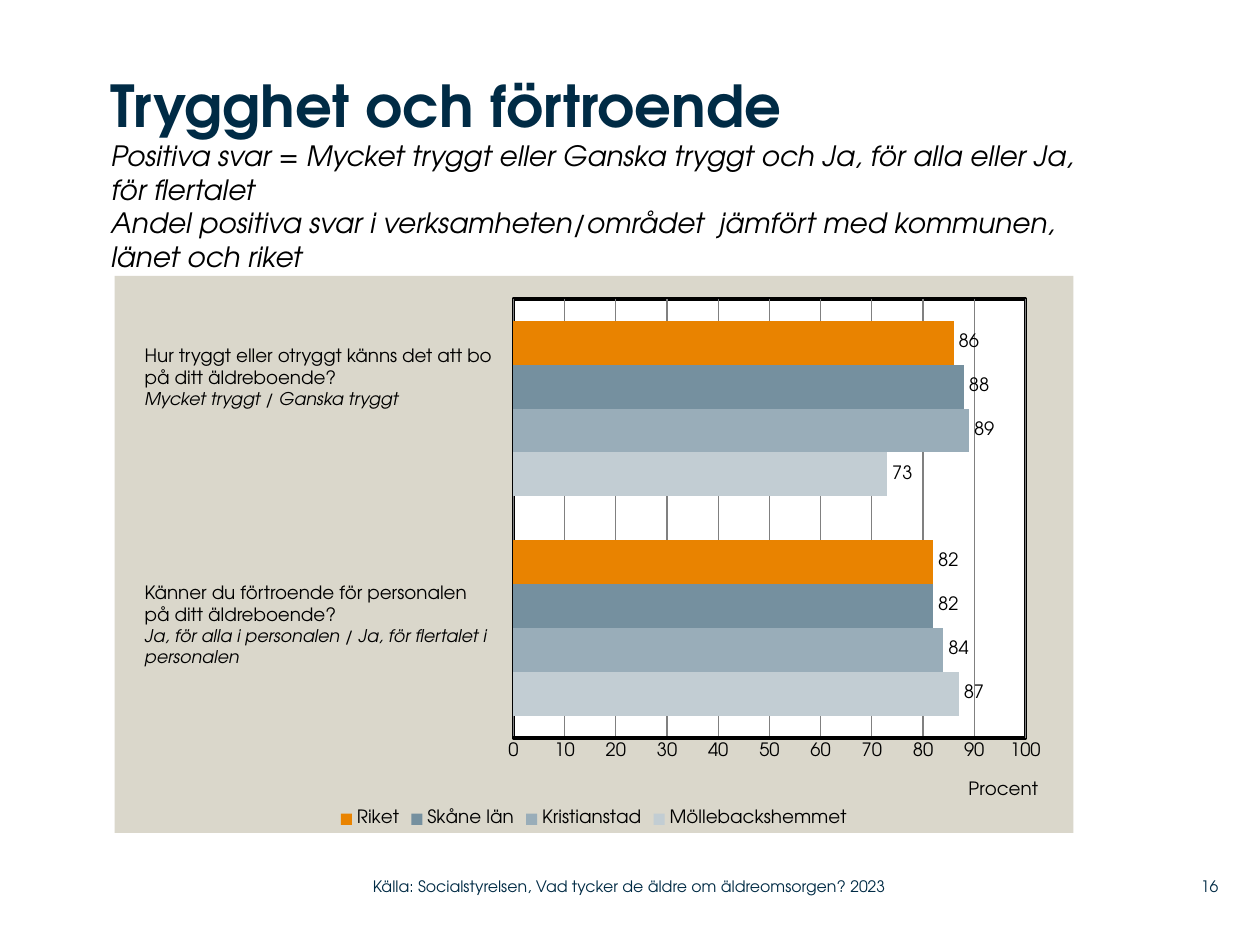
from dataclasses import dataclass
from lxml import etree
from pptx import Presentation, util as u
from pptx.chart.data import CategoryChartData
from pptx.dml.color import RGBColor
from pptx.enum import chart as ch, text as tx
from pptx.oxml.ns import qn


@dataclass(frozen=True)
class Theme:
    face: str = "TeX Gyre Adventor"
    navy: str = "002B45"
    black: str = "000000"
    white: str = "FFFFFF"
    sand: str = "DAD7CB"
    grid: str = "808080"
    head: float = 33
    lead: float = 16
    body: float = 10.5
    answer: float = 10
    foot: float = 9


T = Theme()
SERIES = [
    ("Möllebackshemmet", (87, 73), "C2CDD3"),
    ("Kristianstad", (84, 89), "99ADB9"),
    ("Skåne län", (82, 88), "75909F"),
    ("Riket", (82, 86), "E98300"),
]


def style(font, size, color, bold=False, italic=False):
    font.name, font.size = T.face, u.Pt(size)
    font.bold, font.italic = bold, italic
    font.color.rgb = RGBColor.from_string(color)


def paint(fill, color):
    fill.solid()
    fill.fore_color.rgb = RGBColor.from_string(color)


def inches(box):
    return [u.Inches(v) for v in box]


def bare(frame, anchor):
    frame.word_wrap = True
    frame.vertical_anchor = anchor
    frame.margin_left = frame.margin_right = 0
    frame.margin_top = frame.margin_bottom = 0


def heading(slide, box, title, leads):
    shape = slide.shapes.title
    shape.left, shape.top, shape.width, shape.height = inches(box)
    frame = shape.text_frame
    bare(frame, tx.MSO_ANCHOR.TOP)
    frame.auto_size = tx.MSO_AUTO_SIZE.NONE
    para = frame.paragraphs[0]
    para.alignment = tx.PP_ALIGN.LEFT
    para.line_spacing = 1.0
    run = para.add_run()
    run.text = title
    style(run.font, T.head, T.navy, bold=True)
    for lead in leads:
        para.add_line_break()
        run = para.add_run()
        run.text = lead
        style(run.font, T.lead, T.black, italic=True)


def question(slide, box, lines, answer):
    frame = slide.shapes.add_textbox(*inches(box)).text_frame
    frame.word_wrap = True
    for i, line in enumerate(lines + [answer]):
        para = frame.paragraphs[0] if i == 0 else frame.add_paragraph()
        para.text = line
        last = i == len(lines)
        style(para.font, T.answer if last else T.body, T.black, italic=last)


def footer(slide, box, words, align):
    frame = slide.shapes.add_textbox(*inches(box)).text_frame
    bare(frame, tx.MSO_ANCHOR.MIDDLE)
    para = frame.paragraphs[0]
    para.text, para.alignment = words, align
    style(para.font, T.foot, T.navy)


def area(parent, color, before=None, edge=None):
    """Fill a chart region, with an optional outline colour."""
    props = etree.Element(qn("c:spPr"))
    fill = etree.SubElement(props, qn("a:solidFill"))
    etree.SubElement(fill, qn("a:srgbClr"), val=color)
    line = etree.SubElement(props, qn("a:ln"), w=str(u.Pt(2)))
    if edge:
        fill = etree.SubElement(line, qn("a:solidFill"))
        etree.SubElement(fill, qn("a:srgbClr"), val=edge)
    else:
        etree.SubElement(line, qn("a:noFill"))
    if before is None:
        parent.append(props)
    else:
        before.addprevious(props)


def place(plot, x, y, w, h):
    """Fix the inner plot area as shares of the chart."""
    for old in plot.findall(qn("c:layout")):
        plot.remove(old)
    layout = etree.Element(qn("c:layout"))
    plot.insert(0, layout)
    manual = etree.SubElement(layout, qn("c:manualLayout"))
    parts = [("layoutTarget", "inner"), ("xMode", "edge"), ("yMode", "edge"),
             ("x", x), ("y", y), ("w", w), ("h", h)]
    for name, val in parts:
        etree.SubElement(manual, qn("c:" + name), val=str(val))


def bars(slide, box):
    data = CategoryChartData()
    data.categories = ["1", "2"]
    for name, vals, _ in SERIES:
        data.add_series(name, vals)
    kind = ch.XL_CHART_TYPE.BAR_CLUSTERED
    chart = slide.shapes.add_chart(kind, *inches(box), data).chart
    style(chart.font, T.body, T.black)
    chart.has_title = False
    chart.has_legend = True
    chart.legend.position = ch.XL_LEGEND_POSITION.BOTTOM
    chart.legend.include_in_layout = False
    style(chart.legend.font, T.body, T.black)

    group = chart.plots[0]
    group.gap_width, group.overlap = 100, 0
    group.vary_by_categories = False
    for series, (_, _, color) in zip(group.series, SERIES):
        paint(series.format.fill, color)
        labels = series.data_labels
        labels.show_value = True
        labels.position = ch.XL_LABEL_POSITION.OUTSIDE_END
        style(labels.font, T.body, T.black)

    chart.category_axis.visible = False
    axis = chart.value_axis
    axis.minimum_scale, axis.maximum_scale, axis.major_unit = 0, 100, 10
    axis.major_tick_mark = axis.minor_tick_mark = ch.XL_TICK_MARK.NONE
    style(axis.tick_labels.font, T.body, T.black)
    axis.format.line.width = u.Pt(2)
    paint(axis.format.line.fill, T.black)
    paint(axis.major_gridlines.format.line.fill, T.grid)
    title(axis, "Procent", 0.887, 0.9)

    root = chart.element
    plot = root.chart.plotArea
    place(plot, 0.416, 0.041, 0.534, 0.789)
    area(plot, T.white, edge=T.black)
    area(root, T.sand, before=root.find(qn("c:txPr")))


def title(axis, words, x, y):
    """Name the axis at a share of the chart's size."""
    para = axis.axis_title.text_frame.paragraphs[0]
    para.text = words
    style(para.font, T.body, T.black)
    node = axis.axis_title._element
    layout = node.get_or_add_layout() if hasattr(node, "get_or_add_layout") else node.find(qn("c:layout"))
    manual = etree.SubElement(layout, qn("c:manualLayout"))
    for name, val in [("xMode", "edge"), ("yMode", "edge"), ("x", x), ("y", y)]:
        etree.SubElement(manual, qn("c:" + name), val=str(val))


def main():
    deck = Presentation()
    deck.slide_width, deck.slide_height = u.Inches(10), u.Inches(7.5)
    slide = deck.slides.add_slide(deck.slide_layouts[5])
    bars(slide, (0.91, 2.19, 7.61, 4.42))
    heading(slide, (0.88, 0.55, 7.75, 1.64), "Trygghet och förtroende", [
        "Positiva svar = Mycket tryggt eller Ganska tryggt och Ja, för alla eller Ja, för flertalet",
        "Andel positiva svar i verksamheten/området  jämfört med kommunen, länet och riket",
    ])
    question(slide, (1.05, 2.68, 2.98, 0.81),
             ["Hur tryggt eller otryggt känns det att bo på ditt äldreboende?"],
             "Mycket tryggt / Ganska tryggt")
    question(slide, (1.05, 4.56, 3, 0.98),
             ["Känner du förtroende för personalen", "på ditt äldreboende?"],
             "Ja, för alla i personalen / Ja, för flertalet i personalen")
    footer(slide, (9.2, 6.89, 0.47, 0.29), "16", tx.PP_ALIGN.RIGHT)
    footer(slide, (2.96, 6.89, 4.43, 0.29),
           "Källa: Socialstyrelsen, Vad tycker de äldre om äldreomsorgen? 2023",
           tx.PP_ALIGN.LEFT)
    deck.save("out.pptx")


if __name__ == "__main__":
    main()
